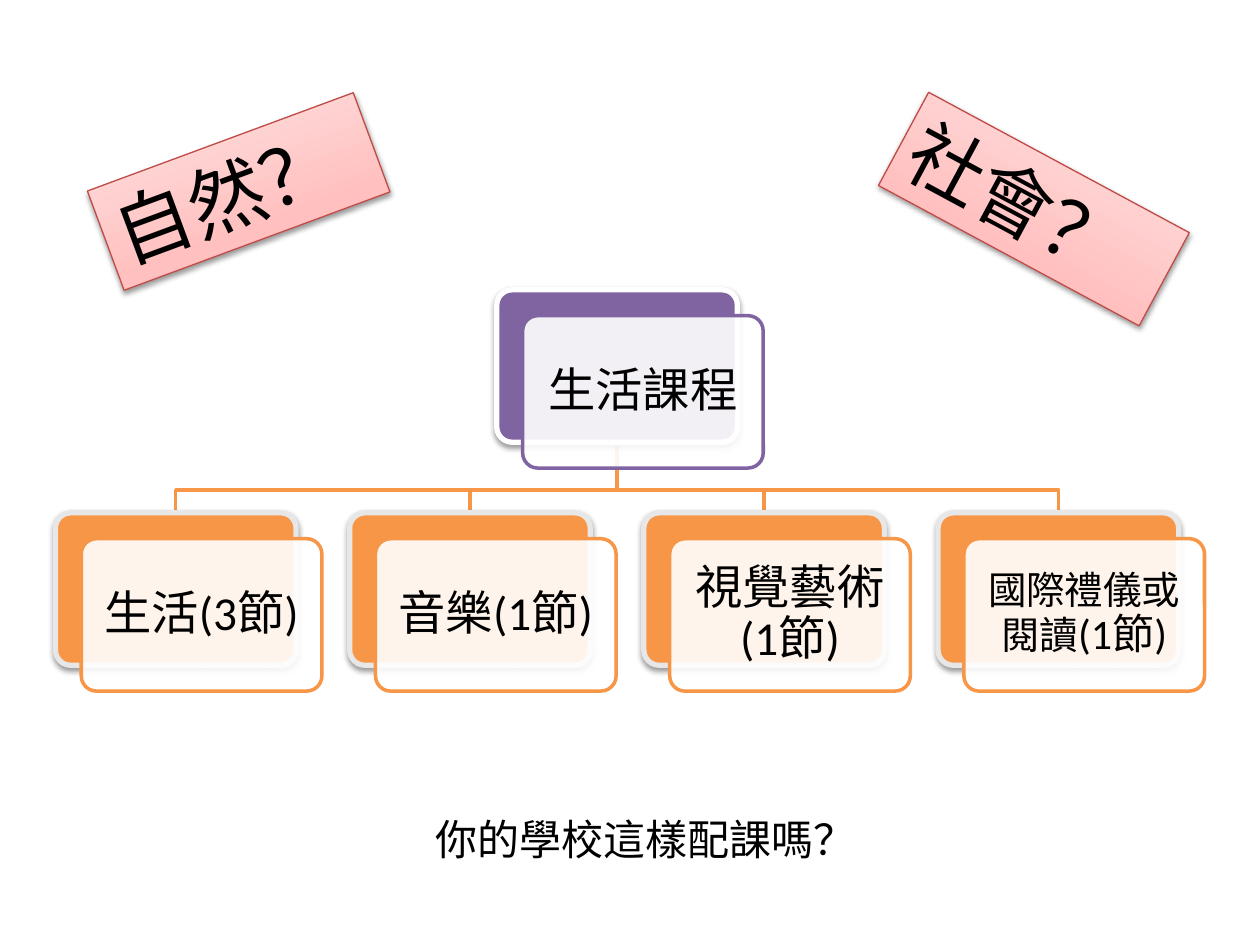
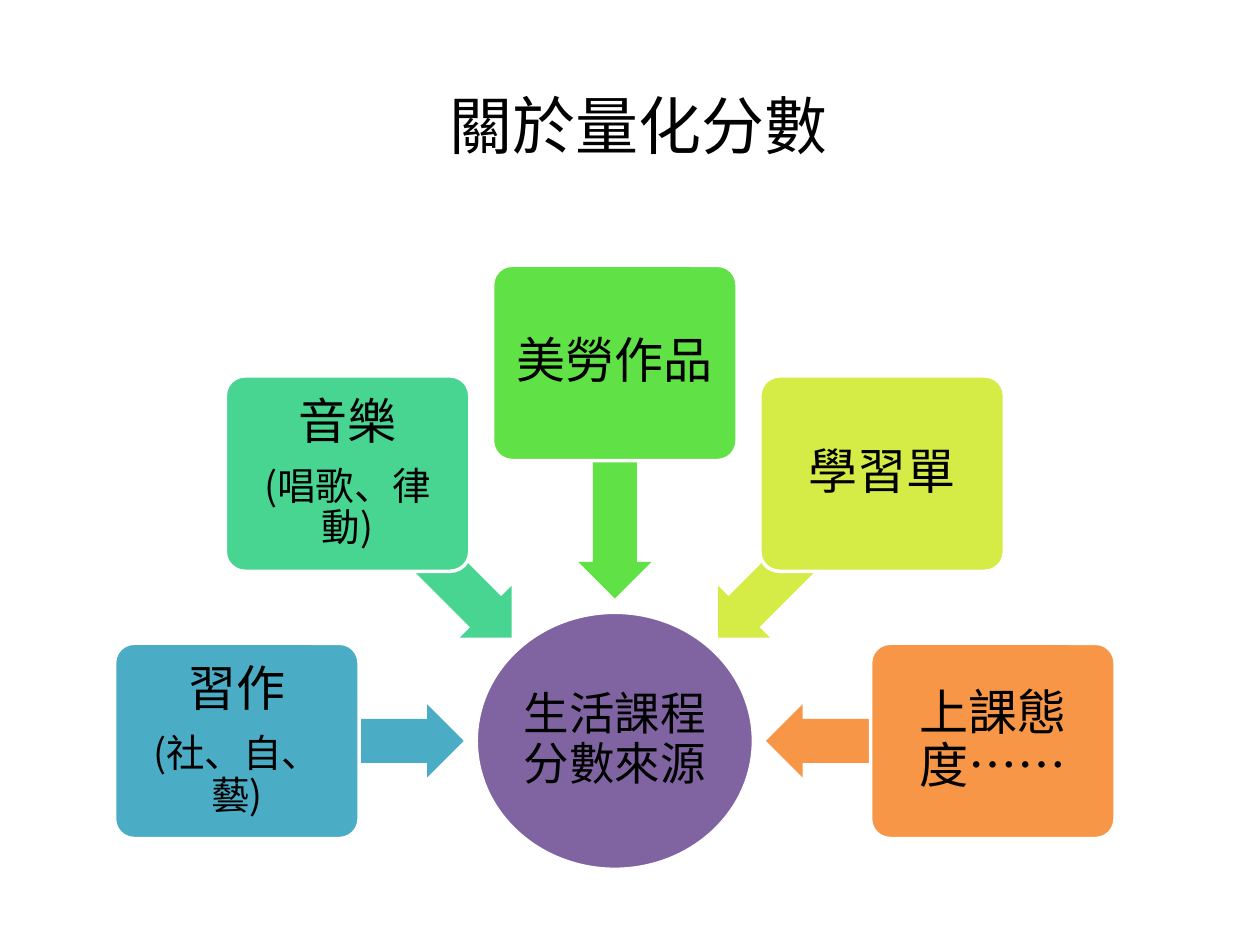
"""Build two slides on the life curriculum: its lessons and its score sources."""
from dataclasses import dataclass
from math import cos, radians, sin

from lxml import etree
from pptx import Presentation
from pptx.dml.color import RGBColor
from pptx.enum import shapes as sh, text as tx
from pptx.oxml import ns
from pptx.util import Inches, Pt


@dataclass(frozen=True)
class Theme:
    ink: str = "000000"
    white: str = "FFFFFF"
    purple: str = "8064A2"
    orange: str = "F79646"
    teal: str = "4BACC6"
    mint: str = "48D491"
    green: str = "60E146"
    lime: str = "D5EC46"
    rim: str = "E7E7E7"
    red: str = "BF4C48"
    blush: tuple = ((0, "FFA6A5"), (35, "FFC0BF"), (100, "FFE7E7"))
    body: str = "Calibri"
    head: str = "Arial"
    cjk: str = "Noto Sans CJK SC"
    tag: int = 44
    title: int = 36
    card: int = 28
    node: int = 27
    hub: int = 26
    ask: int = 24
    note: int = 22


T = Theme()
KIND = sh.MSO_SHAPE

TAGS = [("自然？", (0.77, 1.1, 2.25, 0.84), 339.7),
        ("社會？", (7.03, 1.24, 2.35, 0.84), 28.3)]
ROOT = [("生活課程", T.node)]
LESSONS = [([("生活(3節)", T.node)], 0.11),
           ([("音樂(1節)", T.node)], 0.11),
           ([("視覺藝術(1節)", T.node)], 0.11),
           ([("國際禮儀或閱讀", T.note), ("(1節)", T.ask)], 0.09)]
ASK = "你的學校這樣配課嗎？"

TITLE = "關於量化分數"
HUB = "生活課程分數來源"
PARTS = [("習作", "(社、自、藝)", T.teal, 1.8),
         ("音樂", "(唱歌、律動)", T.mint, 1.84),
         ("美勞作品", "", T.green, 1.87),
         ("學習單", "", T.lime, 1.84),
         ("上課態度……", "", T.orange, 1.8)]


def rgb(code):
    return RGBColor.from_string(code)


def add(parent, name, **attrs):
    node = etree.SubElement(parent, ns.qn(name))
    for key, val in attrs.items():
        node.set(key, str(val))
    return node


def shape(slide, kind, box, fill, line=None, width=2):
    item = slide.shapes.add_shape(kind, *map(Inches, box))
    item.shadow.inherit = False
    item.fill.solid()
    item.fill.fore_color.rgb = rgb(fill)
    if line:
        item.line.color.rgb = rgb(line)
        item.line.width = Pt(width)
    else:
        item.line.fill.background()
    return item


def shade(item):
    glow = item._element.spPr.find(ns.qn("a:effectLst"))
    drop = add(glow, "a:outerShdw", blurRad=Pt(3.1), dist=Pt(1.6),
               dir=5400000, rotWithShape=0)
    add(add(drop, "a:srgbClr", val=T.ink), "a:alpha", val=38000)


def write(item, paras, font, inset=None, align=tx.PP_ALIGN.CENTER,
          anchor=tx.MSO_ANCHOR.MIDDLE, tight=True):
    frame = item.text_frame
    frame.word_wrap = True
    frame.vertical_anchor = anchor
    if inset is not None:
        frame.margin_left = frame.margin_right = Inches(inset)
        frame.margin_top = frame.margin_bottom = Inches(inset)
    for num, runs in enumerate(paras):
        para = frame.add_paragraph() if num else frame.paragraphs[0]
        para.alignment = align
        if tight:
            para.line_spacing = 0.9
            gap = add(para._p.get_or_add_pPr(), "a:spcAft")
            add(gap, "a:spcPct", val=35000)
        for words, size in runs:
            run = para.add_run()
            run.text = words
            run.font.size = Pt(size)
            run.font.color.rgb = rgb(T.ink)
            run.font.name = font
            add(run._r.get_or_add_rPr(), "a:ea", typeface=T.cjk)


def plain(item, words, size):
    write(item, [[(words, size)]], T.body, align=tx.PP_ALIGN.LEFT,
          anchor=tx.MSO_ANCHOR.TOP, tight=False)
    item.text_frame.auto_size = tx.MSO_AUTO_SIZE.SHAPE_TO_FIT_TEXT


def label(slide, box):
    return slide.shapes.add_textbox(*map(Inches, box))


def node(slide, left, top, runs, hue, rim, inset=0.11):
    wide, high, step = 1.91, 1.21, 0.205
    back = shape(slide, KIND.ROUNDED_RECTANGLE, (left, top, wide, high),
                 hue, rim, 3)
    shade(back)
    front = shape(slide, KIND.ROUNDED_RECTANGLE,
                  (left + step, top + step, wide, high), T.white, hue)
    clr = front._element.spPr.find(ns.qn("a:solidFill"))[0]
    add(clr, "a:alpha", val=90000)
    for item in (back, front):
        item.adjustments[0] = 0.1
    write(front, [runs], T.body, inset)


def branch(slide, start, end, bend):
    (x, y), (far, low) = start, end
    form = slide.shapes.build_freeform(Inches(x), Inches(y))
    form.add_line_segments([(Inches(a), Inches(b)) for a, b in
                            ((x, bend), (far, bend), (far, low))], close=False)
    item = form.convert_to_shape()
    item.shadow.inherit = False
    item.fill.background()
    item.line.color.rgb = rgb(T.orange)
    item.line.width = Pt(2)


def tag(slide, words, box, turn):
    item = shape(slide, KIND.RECTANGLE, box, T.white, T.red, 0.75)
    item.rotation = turn
    item.fill.gradient()
    item.fill.gradient_angle = 90
    stops = item._element.spPr.find(".//" + ns.qn("a:gsLst"))
    for old in list(stops):
        stops.remove(old)
    for pos, code in T.blush:
        add(add(stops, "a:gs", pos=pos * 1000), "a:srgbClr", val=code)
    shade(item)
    plain(item, words, T.tag)


def lessons(slide):
    left, top, pitch, half = 0.44, 4.07, 2.335, 0.955
    spots = [left + pitch * num for num in range(len(LESSONS))]
    mid = (spots[0] + spots[-1]) / 2
    for spot in reversed(spots):
        branch(slide, (mid + half, 3.51), (spot + half, top), 3.89)
    node(slide, mid, 2.3, ROOT, T.purple, T.white)
    for spot, (runs, inset) in zip(spots, LESSONS):
        node(slide, spot, top, runs, T.orange, T.rim, inset)
    for words, box, turn in TAGS:
        tag(slide, words, box, turn)
    plain(label(slide, (3.36, 6.41, 4.48, 0.5)), ASK, T.ask)


def scores(slide):
    write(label(slide, (0.57, 0.36, 9, 1.25)), [[(TITLE, T.title)]], T.head,
          tight=False)
    midx, midy, reach = 4.88, 5.88, 3

    def around(dist, turn, wide, high):
        x = midx + dist * cos(radians(turn))
        y = midy + dist * sin(radians(turn))
        return x - wide / 2, y - high / 2, wide, high

    hub = shape(slide, KIND.OVAL, around(0, 0, 2.2, 2.04), T.purple, T.white)
    write(hub, [[(HUB, T.hub)]], T.cjk, 0.02)
    for num, (name, more, hue, size) in enumerate(PARTS):
        turn = 180 + 45 * num
        arrow = shape(slide, KIND.LEFT_ARROW,
                      around(reach - size / 2, turn, size, 0.58), hue)
        arrow.adjustments[0], arrow.adjustments[1] = 0.6, 0.5
        arrow.rotation = turn % 360
        card = shape(slide, KIND.ROUNDED_RECTANGLE,
                     around(reach, turn, 1.94, 1.55), hue, T.white)
        card.adjustments[0] = 0.1
        paras = [[(name, T.card)]] + ([[(more, T.note)]] if more else [])
        write(card, paras, T.cjk, 0.06)


def main():
    deck = Presentation()
    deck.slide_width, deck.slide_height = Inches(10), Inches(7.5)
    for draw in (lessons, scores):
        draw(deck.slides.add_slide(deck.slide_layouts[6]))
    deck.save("out.pptx")


if __name__ == "__main__":
    main()
